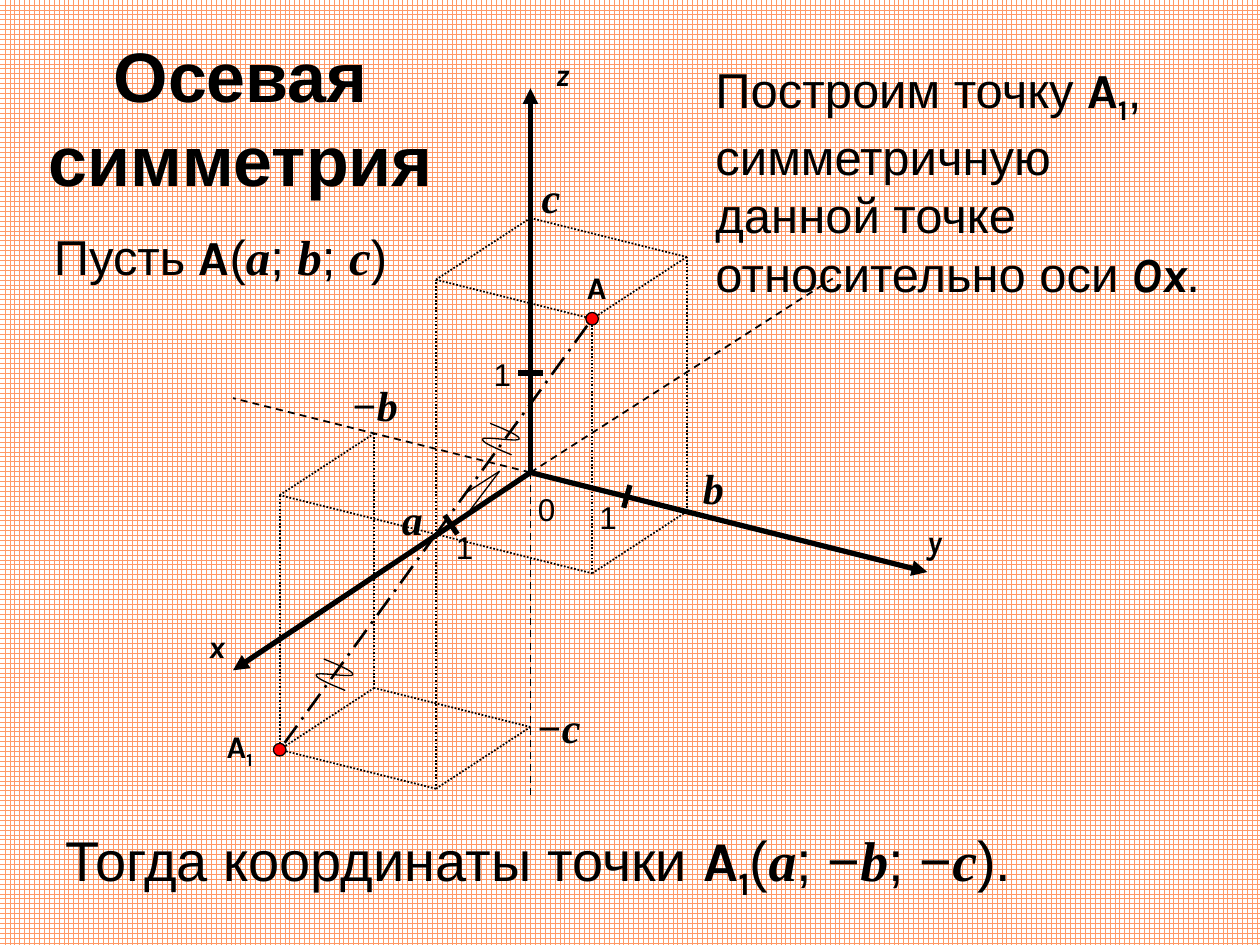
from dataclasses import dataclass
from itertools import combinations, product

from pptx import Presentation
from pptx.dml.color import RGBColor
from pptx.enum.dml import MSO_LINE, MSO_PATTERN
from pptx.enum.shapes import MSO_CONNECTOR, MSO_SHAPE
from pptx.enum.text import MSO_ANCHOR, MSO_AUTO_SIZE as FIT, PP_ALIGN
from pptx.oxml.ns import qn
from pptx.oxml.xmlchemy import OxmlElement
from pptx.util import Inches, Pt


@dataclass(frozen=True)
class Theme:
    """Colours, type sizes, line widths and faces of the slide."""
    ink: RGBColor = RGBColor(0, 0, 0)
    paper: RGBColor = RGBColor(255, 255, 255)
    grid: RGBColor = RGBColor(0xFF, 0x99, 0x66)
    point: RGBColor = RGBColor(255, 0, 0)
    title: int = 40
    result: int = 32
    text: int = 28
    variable: int = 24
    label: int = 18
    axis: float = 3
    link: float = 1.5
    guide: float = 1
    thin: float = 0.75


THEME = Theme()
PLAIN = ("Arial", False, False)
HEADING = ("Arial", True, False)
NAME = ("Karla", True, False)
AXIS = ("Karla", True, True)
VALUE = ("Times New Roman", True, True)
INDEX = ("1", NAME, "-25000")

COLUMNS, ROWS, CELL = 100, 75, 0.1
ORIGIN = (42.1, 37.5)
UNIT_A, UNIT_B, UNIT_C = (-7.5, 4.9), (12.4, 3.1), (0, -20.2)


def cells(*counts):
    """Turn counts of grid cells into lengths."""
    return [Inches(count * CELL) for count in counts]


def project(a, b, c):
    """Place a point of space on the grid."""
    return tuple(start + a * x + b * y + c * z
                 for start, x, y, z in zip(ORIGIN, UNIT_A, UNIT_B, UNIT_C))


def style(font, face):
    """Give a font its name, weight and slant."""
    font.name, font.bold, font.italic = face


def write(box, runs, size, align=PP_ALIGN.LEFT):
    """Fill a box with one paragraph of styled runs."""
    frame = box.text_frame
    frame.word_wrap = True
    frame.auto_size = FIT.SHAPE_TO_FIT_TEXT
    frame.vertical_anchor = MSO_ANCHOR.TOP
    para = frame.paragraphs[0]
    para.alignment = align
    para.font.size = Pt(size)
    para.font.color.rgb = THEME.ink
    if len(runs) == 1:
        style(para.font, runs[0][1])
    for text, face, *baseline in runs:
        span = para.add_run()
        span.text = text
        if len(runs) > 1:
            style(span.font, face)
        if baseline:
            span._r.get_or_add_rPr().set("baseline", baseline[0])


def add_text(page, place, runs, size):
    """Add a text box on the grid."""
    write(page.shapes.add_textbox(*cells(*place)), runs, size)


def add_line(page, start, end, width, dash=None, arrow=False):
    """Add a straight line, dashed or with an arrowhead if asked."""
    line = page.shapes.add_connector(MSO_CONNECTOR.STRAIGHT, *cells(*start, *end))
    line.line.color.rgb = THEME.ink
    line.line.width = Pt(width)
    if dash:
        line.line.dash_style = dash
    properties = line._element.spPr
    if arrow:
        head = OxmlElement("a:tailEnd")
        head.set("type", "triangle")
        properties.find(qn("a:ln")).append(head)
    properties.append(OxmlElement("a:effectLst"))


def add_point(page, center, size=1):
    """Add a red dot around a grid position."""
    corner = [value - size / 2 for value in center]
    dot = page.shapes.add_shape(MSO_SHAPE.OVAL, *cells(*corner, size, size))
    dot.shadow.inherit = False
    dot.fill.solid()
    dot.fill.fore_color.rgb = THEME.point
    dot.line.color.rgb = THEME.ink
    dot.line.width = Pt(THEME.thin)


def bezier(controls, share):
    """Find the point at a share of a cubic curve."""
    rest = 1 - share
    weights = (rest ** 3, 3 * rest ** 2 * share, 3 * rest * share ** 2, share ** 3)
    return tuple(sum(w * p[i] for w, p in zip(weights, controls)) for i in (0, 1))


def add_wave(page, left, top, steps=10):
    """Add the wavy mark of equal segments."""
    knots = [(2.4, 2.5), (1.2, 2), (0, 1.5), (0.1, 1.25), (0.2, 1), (2.9, 1.5),
             (3, 1.25), (3.1, 1), (1.9, 0.5), (0.7, 0)]
    track = [bezier(knots[i:i + 4], step / steps)
             for i in (0, 3, 6) for step in range(steps + 1)]
    points = [cells(left + x, top + y) for x, y in track]
    builder = page.shapes.build_freeform(*points[0])
    builder.add_line_segments(points[1:], close=False)
    wave = builder.convert_to_shape()
    wave.shadow.inherit = False
    wave.fill.background()
    wave.line.color.rgb = THEME.ink
    wave.line.width = Pt(THEME.thin)


def add_prism(page, side):
    """Dot the edges of a coordinate box that lie off the axes."""
    corners = list(product((0, 1), repeat=3))[1:]
    for start, end in combinations(corners, 2):
        if sum(p != q for p, q in zip(start, end)) == 1:
            ends = [project(a, side * b, side * c) for a, b, c in (start, end)]
            add_line(page, *ends, THEME.guide, MSO_LINE.ROUND_DOT)


def add_axes(page):
    """Draw the half-axes and their unit ticks."""
    for end in ((66.1, 22.1), (18.5, 31.6), (42.1, 63.3)):
        add_line(page, ORIGIN, end, THEME.guide, MSO_LINE.DASH)
    for end in ((18.5, 53.2), (73.6, 45.4), (42.1, 7)):
        add_line(page, ORIGIN, end, THEME.axis, arrow=True)
    for start, end in (((41.1, 29.6), (43.1, 29.6)), ((49.5, 40.3), (50, 38.5)),
                       ((35.3, 40.9), (36.3, 42.4))):
        add_line(page, start, end, THEME.axis)


def add_symmetry(page):
    """Join the point with its image and mark the equal parts."""
    foot, source, image = project(1, 0, 0), project(1, 1, 1), project(1, -1, -1)
    for end in (source, image):
        add_line(page, foot, end, THEME.link, MSO_LINE.LONG_DASH_DOT)
    for corner in ((38.2, 33.6), (25, 52.3)):
        add_wave(page, *corner)
    for end in ((37.3, 40.5), (37, 39.1)):
        add_line(page, (39.65, 37.4), end, THEME.thin)
    for center in (source, image):
        add_point(page, center)


def add_labels(page):
    """Name the axes, units, coordinates and points."""
    small, large = (THEME.label, 4), (THEME.variable, 5)
    for text, face, (size, height), left, top, width in (
            ("x", AXIS, small, 15.6, 49.3, 4.4), ("y", AXIS, small, 72.6, 40.9, 4.4),
            ("z", AXIS, small, 43.1, 3.9, 4.4), ("0", PLAIN, small, 41.7, 38.4, 3.5),
            ("1", PLAIN, small, 46.6, 39, 4.4), ("1", PLAIN, small, 38.2, 27.7, 4.4),
            ("1", PLAIN, small, 35.2, 41.4, 4.4), ("A", NAME, small, 45.6, 20.8, 3.5),
            ("a", VALUE, large, 30.9, 38.7, 3.9), ("b", VALUE, large, 54.8, 36.2, 3.9),
            ("c", VALUE, large, 42, 13.1, 3.9), ("−c", VALUE, large, 41.6, 55.2, 6.4),
            ("−b", VALUE, large, 26.9, 29.6, 5.9)):
        add_text(page, (left, top, width, height), [(text, face)], size)
    add_text(page, (17, 57.2, 5.2, 4), [("A", NAME), INDEX], THEME.label)


def add_statements(page):
    """Write the title, the task and the result."""
    title = page.shapes.title
    title.left, title.top, title.width, title.height = cells(2.3, 2.1, 33.6, 14.5)
    write(title, [("Осевая симметрия", HEADING)], THEME.title, PP_ALIGN.CENTER)
    add_text(page, (3.3, 17.5, 30, 5.7), [
        ("Пусть ", PLAIN), ("A", NAME), ("(", PLAIN), ("a", VALUE), ("; ", PLAIN),
        ("b", VALUE), ("; ", PLAIN), ("c", VALUE), (")", PLAIN)], THEME.text)
    add_text(page, (55.8, 4.2, 41.8, 19.9), [
        ("Построим точку ", PLAIN), ("A", NAME), INDEX,
        (", симметричную данной точке относительно оси ", PLAIN),
        ("Ox", AXIS), (".", PLAIN)], THEME.text)
    add_text(page, (4.2, 65, 93.3, 6.4), [
        ("Тогда координаты точки ", PLAIN), ("A", NAME), INDEX, ("(", PLAIN),
        ("a", VALUE), ("; −", PLAIN), ("b", VALUE), ("; −", PLAIN), ("c", VALUE),
        (").", PLAIN)], THEME.result)


def main():
    """Build the slide on axial symmetry."""
    deck = Presentation()
    deck.slide_width, deck.slide_height = cells(COLUMNS, ROWS)
    page = deck.slides.add_slide(deck.slide_layouts[5])
    fill = page.background.fill
    fill.patterned()
    fill.pattern = MSO_PATTERN.LARGE_GRID
    fill.fore_color.rgb, fill.back_color.rgb = THEME.grid, THEME.paper
    add_axes(page)
    for side in (1, -1):
        add_prism(page, side)
    add_symmetry(page)
    add_labels(page)
    add_statements(page)
    deck.save("out.pptx")


if __name__ == "__main__":
    main()
